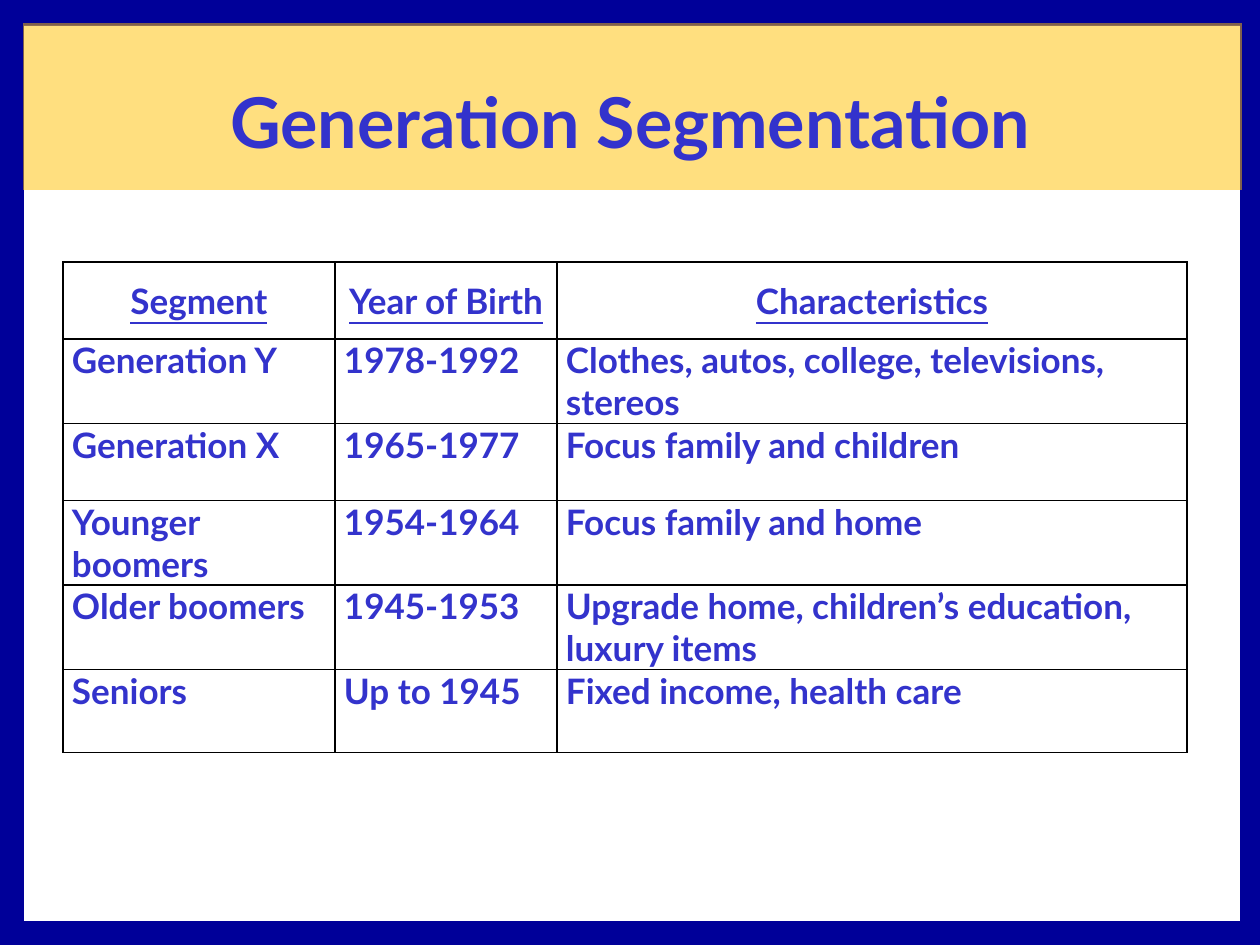
import pptx
import pptx.dml.color
import pptx.enum.shapes
import pptx.enum.text
import pptx.oxml
import pptx.oxml.ns
import pptx.util

EMU_PER_PX = 914400 / 126
FONT = "Lato"
NAVY = pptx.dml.color.RGBColor(0x00, 0x00, 0x99)
WHITE = pptx.dml.color.RGBColor(0xFF, 0xFF, 0xFF)
GOLD = pptx.dml.color.RGBColor(0xFF, 0xC0, 0x00)
INDIGO = pptx.dml.color.RGBColor(0x33, 0x33, 0xCC)
BLACK = pptx.dml.color.RGBColor(0x00, 0x00, 0x00)

COLUMN_WIDTHS = [272, 222, 630]
ROW_HEIGHTS = [77, 77, 77, 77, 77, 83]
SEGMENTS = [
    ("Segment", "Year of Birth", "Characteristics"),
    ("Generation Y", "1978-1992", "Clothes, autos, college, televisions, stereos"),
    ("Generation X", "1965-1977", "Focus family and children"),
    ("Younger boomers", "1954-1964", "Focus family and home"),
    ("Older boomers", "1945-1953", "Upgrade home, children’s education, luxury items"),
    ("Seniors", "Up to 1945", "Fixed income, health care"),
]


def px(length):
    return pptx.util.Emu(round(length * EMU_PER_PX))


def add_panel(page, left, top, width, height, color, opacity=100):
    panel = page.shapes.add_shape(
        pptx.enum.shapes.MSO_SHAPE.RECTANGLE, px(left), px(top), px(width), px(height))
    panel.shadow.inherit = False
    panel.line.fill.background()
    panel.fill.solid()
    panel.fill.fore_color.rgb = color
    if opacity < 100:
        tint = panel.element.spPr.find(".//" + pptx.oxml.ns.qn("a:srgbClr"))
        tint.append(pptx.oxml.parse_xml(
            f'<a:alpha {pptx.oxml.ns.nsdecls("a")} val="{opacity * 1000}"/>'))
    return panel


def write_text(frame, text, size, align, underline=False):
    para = frame.paragraphs[0]
    para.alignment = align
    span = para.add_run()
    span.text = text
    span.font.name = FONT
    span.font.size = pptx.util.Pt(size)
    span.font.bold = True
    span.font.underline = underline
    span.font.color.rgb = INDIGO


def place_title(page, text, panel_below):
    title = page.shapes.title
    title.left, title.top, title.width, title.height = px(42), px(42), px(1176), px(157)
    title.text_frame.vertical_anchor = pptx.enum.text.MSO_ANCHOR.MIDDLE
    title.text_frame.auto_size = pptx.enum.text.MSO_AUTO_SIZE.NONE
    write_text(title.text_frame, text, 40, pptx.enum.text.PP_ALIGN.CENTER)
    # Bring the title in front of the panels
    panel_below.element.addnext(title.element)


def draw_borders(cell):
    properties = cell._tc.get_or_add_tcPr()
    for index, side in enumerate(("lnL", "lnR", "lnT", "lnB")):
        properties.insert(index, pptx.oxml.parse_xml(
            f'<a:{side} {pptx.oxml.ns.nsdecls("a")} w="{pptx.util.Pt(1)}">'
            f'<a:solidFill><a:srgbClr val="{BLACK}"/></a:solidFill></a:{side}>'))


def format_cell(cell, text, is_header):
    cell.margin_left = cell.margin_right = px(9)
    cell.margin_top = cell.margin_bottom = 0
    cell.fill.background()
    align = pptx.enum.text.PP_ALIGN.LEFT
    cell.vertical_anchor = pptx.enum.text.MSO_ANCHOR.TOP
    if is_header:
        align = pptx.enum.text.PP_ALIGN.CENTER
        cell.vertical_anchor = pptx.enum.text.MSO_ANCHOR.MIDDLE
    write_text(cell.text_frame, text, 20, align, underline=is_header)
    draw_borders(cell)


def add_segment_table(page, left, top):
    table = page.shapes.add_table(
        len(ROW_HEIGHTS), len(COLUMN_WIDTHS), px(left), px(top),
        px(sum(COLUMN_WIDTHS)), px(sum(ROW_HEIGHTS))).table
    table.first_row = table.horz_banding = False
    for column, width in zip(table.columns, COLUMN_WIDTHS):
        column.width = px(width)
    for row, height, texts in zip(table.rows, ROW_HEIGHTS, SEGMENTS):
        row.height = px(height)
        for cell, text in zip(row.cells, texts):
            format_cell(cell, text, is_header=texts is SEGMENTS[0])


def main():
    deck = pptx.Presentation()
    deck.slide_width, deck.slide_height = px(1260), px(945)
    page = deck.slides.add_slide(deck.slide_layouts.get_by_name("Title Only"))

    # Navy frame around a white sheet, with the title band
    add_panel(page, 0, 0, 1260, 945, NAVY)
    add_panel(page, 24, 26, 1216, 895, WHITE)
    band = add_panel(page, 23, 23, 1219, 167, GOLD, opacity=50)

    # Title and table
    place_title(page, "Generation Segmentation", band)
    add_segment_table(page, 63, 262)

    deck.save("out.pptx")


if __name__ == "__main__":
    main()
